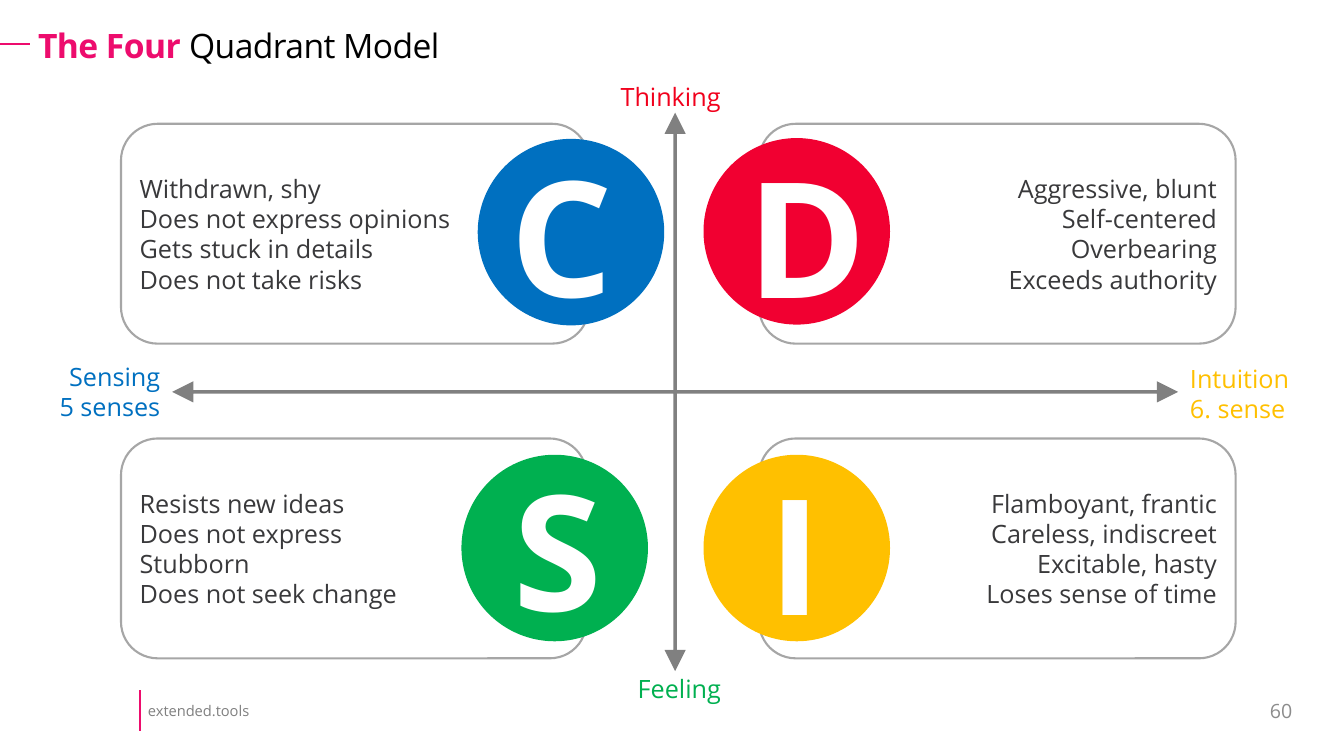
"""Build the four quadrant model slide."""
from lxml import etree
from pptx import Presentation
from pptx import util as u
from pptx.dml.color import RGBColor
from pptx.enum import shapes, text
from pptx.oxml.ns import qn

Cm = u.Cm
Kind = shapes.MSO_SHAPE
Side = text.PP_ALIGN
Mid = text.MSO_ANCHOR.MIDDLE
Top = text.MSO_ANCHOR.TOP


def tone(code):
    return RGBColor.from_string(code)


def write(shape, lines, size, color, side=Side.LEFT, pads=(0.25, 0.13, 0.25, 0.13),
          anchor=Top, wrap=True, bold=False):
    frame = shape.text_frame
    frame.word_wrap = wrap
    frame.vertical_anchor = anchor
    frame.margin_left, frame.margin_top, frame.margin_right, frame.margin_bottom = map(Cm, pads)
    frame.text = "\n".join(lines)
    for par in frame.paragraphs:
        par.alignment = side
        par.font.name = "Open Sans"
        par.font.size = u.Pt(size)
        par.font.bold = bold
        par.font.color.rgb = tone(color)
    return frame


deck = Presentation()
deck.slide_width, deck.slide_height = Cm(33.87), Cm(19.05)
slide = deck.slides.add_slide(deck.slide_layouts[6])
items = slide.shapes

foot = items.add_textbox(Cm(3.4), Cm(17.5), Cm(4.37), Cm(0.81))
write(foot, ["extended.tools"], 10.5, "808080", pads=(0.33, 0.18, 0.33, 0.18), anchor=Mid)

for x1, y1, x2, y2 in [(3.53, 17.4, 3.53, 18.42), (0, 1.12, 0.76, 1.12)]:
    rule = items.add_connector(shapes.MSO_CONNECTOR.STRAIGHT, Cm(x1), Cm(y1), Cm(x2), Cm(y2))
    rule.line.color.rgb = tone("ED0C6D")
    rule.line.width = u.Pt(1.5)
    etree.SubElement(rule._element.spPr, qn("a:effectLst"))

left = (Side.LEFT, (0.2, 0.13, 0.79, 0.13))
right = (Side.RIGHT, (2.59, 0.13, 0.2, 0.13))
cards = [
    (3.05, 3.12, 11.79, left, ["Withdrawn, shy", "Does not express opinions",
                               "Gets stuck in details", "Does not take risks"]),
    (3.05, 11.05, 11.73, left, ["Resists new ideas", "Does not express",
                                "Stubborn", "Does not seek change"]),
    (19.13, 3.12, 12.01, right, ["Aggressive, blunt", "Self-centered",
                                 "Overbearing", "Exceeds authority"]),
    (19.13, 11.05, 12.01, right, ["Flamboyant, frantic", "Careless, indiscreet",
                                  "Excitable, hasty", "Loses sense of time"]),
]
for x, y, width, (side, pads), lines in cards:
    card = items.add_shape(Kind.ROUNDED_RECTANGLE, Cm(x), Cm(y), Cm(width), Cm(5.54))
    card.shadow.inherit = False
    card.fill.background()
    card.line.color.rgb = tone("A6A6A6")
    card.line.width = u.Pt(1.5)
    write(card, lines, 18, "39393B", side, pads, Mid)

title = items.add_textbox(Cm(0.76), Cm(0.64), Cm(32.08), Cm(1.14))
par = write(title, [""], 24, "000000", pads=(0.2, 0.1, 0.2, 0.1)).paragraphs[0]
par.line_spacing = 0.9
for words, color, bold in [("The Four ", "ED0C6D", True), ("Quadrant Model", "000000", False)]:
    run = par.add_run()
    run.text = words
    run.font.bold = bold
    run.font.color.rgb = tone(color)
    run.font._element.set("spc", "-40")

axes = items.add_shape(Kind.QUAD_ARROW, Cm(4.34), Cm(2.84), Cm(25.35), Cm(14.07))
axes.shadow.inherit = False
axes.fill.solid()
axes.fill.fore_color.rgb = tone("808080")
axes.line.fill.background()
for i, value in enumerate([0.006, 0.019, 0.038]):
    axes.adjustments[i] = value

discs = [
    ("D", "F10031", 17.73, 3.48, 18.59, 3.33),
    ("S", "00B050", 11.63, 11.46, 12.45, 11.23),
    ("I", "FFC000", 17.73, 11.46, 18.42, 11.33),
    ("C", "0070C0", 12.04, 3.5, 12.55, 3.3),
]
for letter, color, x, y, tx, ty in discs:
    disc = items.add_shape(Kind.OVAL, Cm(x), Cm(y), Cm(4.7), Cm(4.7))
    disc.shadow.inherit = False
    disc.fill.solid()
    disc.fill.fore_color.rgb = tone(color)
    disc.line.fill.background()
    label = items.add_textbox(Cm(tx), Cm(ty), Cm(3.23), Cm(5.18))
    write(label, [letter], 115, "FFFFFF", Side.CENTER, bold=True)

page = items.add_textbox(Cm(29.62), Cm(17.4), Cm(3.2), Cm(1.02))
write(page, ["60"], 14, "8C8C8C", Side.RIGHT, anchor=Mid)

poles = [
    (["Feeling"], "00B050", Side.RIGHT, 15.8, 16.84, 2.62, 1.02),
    (["Thinking"], "F1001C", Side.LEFT, 15.39, 1.93, 3.05, 1.02),
    (["Sensing", "5 senses"], "0070C0", Side.RIGHT, 1.22, 8.97, 3.07, 1.78),
    (["Intuition", "6. sense"], "FFC000", Side.LEFT, 29.74, 9.02, 3.02, 1.78),
]
for lines, color, side, *place in poles:
    pole = items.add_textbox(*map(Cm, place))
    write(pole, lines, 18, color, side, wrap=False)

deck.save("out.pptx")
